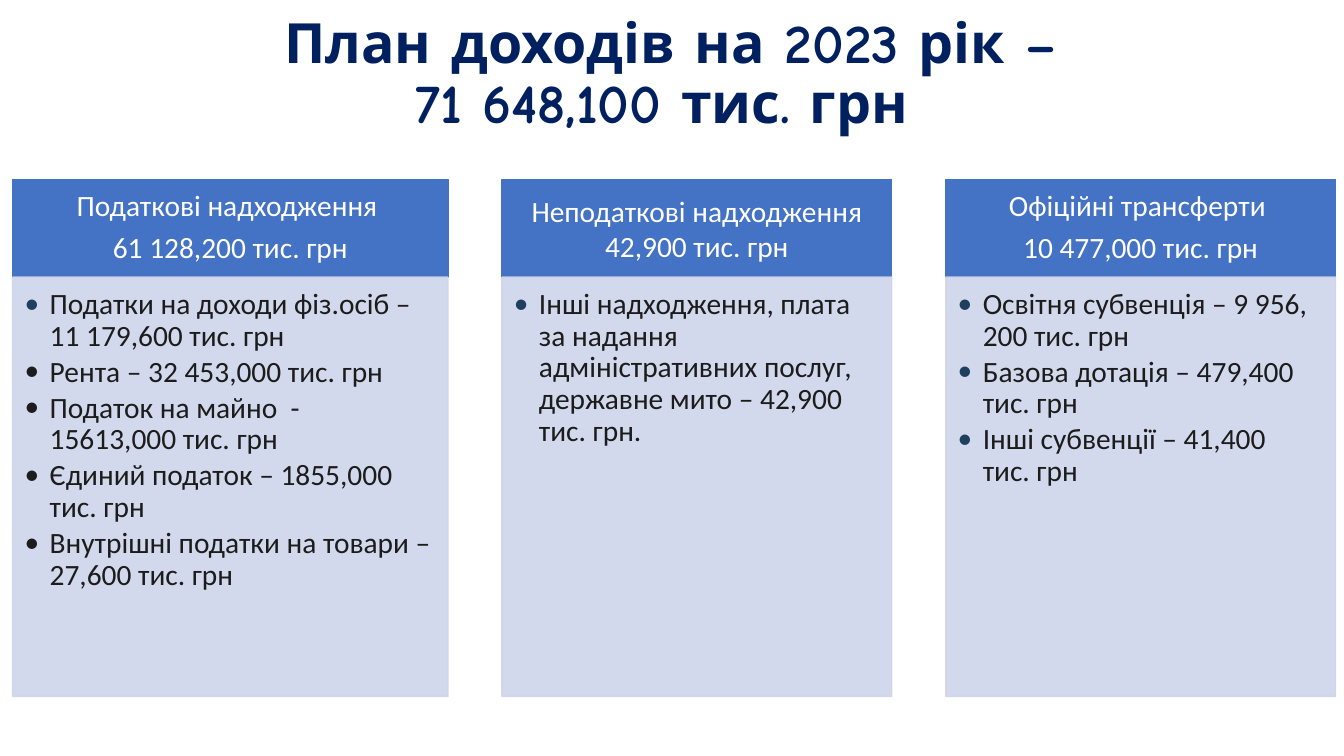
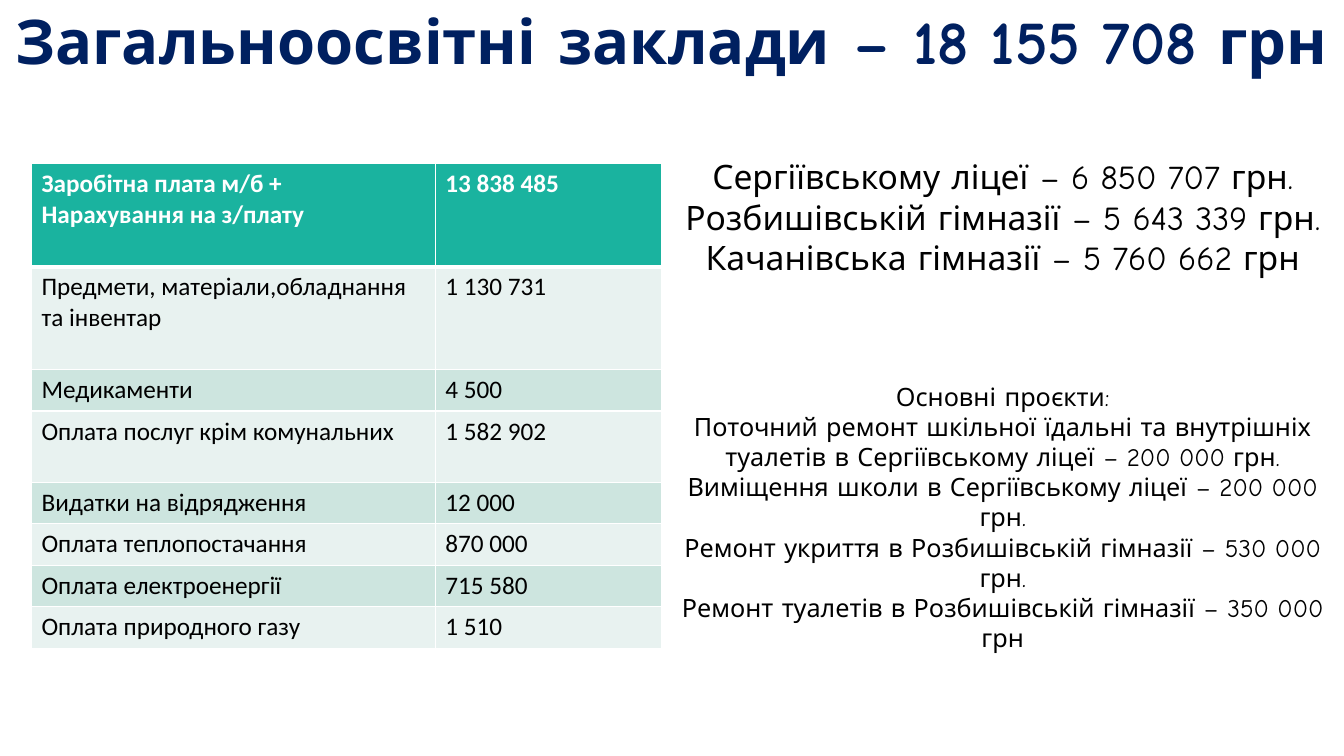
from lxml.etree import SubElement as Sub
from pptx import Presentation
from pptx.dml.color import RGBColor
from pptx.enum.shapes import MSO_SHAPE as Shape
from pptx.enum.text import MSO_ANCHOR as Anchor, PP_ALIGN as Align
from pptx.oxml.ns import qn
from pptx.util import Pt

WIDTH, HEIGHT = 960, 540
BODY_FONT, DISPLAY_FONT = "Calibri", "Comic Neue"
NAVY, BLUE, PALE, BULLET = "002060", "4472C4", "CFD5EA", "1F3F5F"
WHITE, BLACK, INK = "FFFFFF", "000000", "1C1C1C"
TEAL, BANDS = "1AB39F", ("CDE5DF", "E8F2F0")


def rgb(value):
    return RGBColor.from_string(value)


class Deck:
    """Holds the shared style and the current slide."""

    def __init__(self):
        self.prs = Presentation()
        self.prs.slide_width, self.prs.slide_height = Pt(WIDTH), Pt(HEIGHT)

    def slide(self):
        self.s = self.prs.slides.add_slide(self.prs.slide_layouts[6])

    def style(self, p, font, size, color, bold=False):
        p.font.name, p.font.size, p.font.bold = font, Pt(size), bold
        p.font.color.rgb = rgb(color)

    def frame(self, sp, anchor, insets):
        tf = sp.text_frame
        tf.word_wrap, tf.vertical_anchor = True, anchor
        tf.margin_left, tf.margin_top, tf.margin_right, tf.margin_bottom = map(Pt, insets)
        return tf

    def fill_text(self, tf, lines, font, size, color, bold=False,
                  align=Align.CENTER, spacing=1.0, after=0, bullets=()):
        for i, line in enumerate(lines):
            p = tf.paragraphs[0] if i == 0 else tf.add_paragraph()
            p.text = line
            if bullets:
                self.bullet(p, bullets[i])
            p.alignment, p.line_spacing, p.space_after = align, spacing, Pt(after)
            self.style(p, font, size, color, bold)

    def bullet(self, p, color):
        pPr = p._p.get_or_add_pPr()
        pPr.set("marL", str(Pt(18)))
        pPr.set("indent", str(-Pt(18)))
        Sub(Sub(pPr, qn("a:buClr")), qn("a:srgbClr"), val=color)
        Sub(pPr, qn("a:buFont"), typeface=BODY_FONT)
        Sub(pPr, qn("a:buChar"), char="•")

    def text(self, box, lines, size, color=BLACK, anchor=Anchor.TOP, **look):
        sp = self.s.shapes.add_textbox(*map(Pt, box))
        tf = self.frame(sp, anchor, (7.2, 3.6, 7.2, 3.6))
        self.fill_text(tf, lines, DISPLAY_FONT, size, color, **look)

    def title(self, box, text, size):
        self.text(box, [text], size, NAVY, Anchor.MIDDLE, bold=True, spacing=0.9)

    def panel(self, box, color, alpha=None):
        sp = self.s.shapes.add_shape(Shape.RECTANGLE, *map(Pt, box))
        sp.shadow.inherit = False
        sp.fill.solid()
        sp.fill.fore_color.rgb = sp.line.color.rgb = rgb(color)
        sp.line.width = Pt(1)
        if alpha:
            for clr in sp._element.spPr.findall(".//" + qn("a:srgbClr")):
                Sub(clr, qn("a:alpha"), val=str(alpha * 1000))
        return sp

    def column(self, left, width, heading, items, accents):
        sp = self.panel((left, 128, width, 70), BLUE)
        tf = self.frame(sp, Anchor.MIDDLE, (11.5, 6.5, 11.5, 6.5))
        self.fill_text(tf, heading, BODY_FONT, 21, WHITE, after=7,
                       spacing=0.9 if len(heading) > 1 else 1.0)
        sp = self.panel((left, 198, width, 299.5), PALE, 90)
        tf = self.frame(sp, Anchor.TOP, (8.5, 8.5, 11.5, 13))
        colors = [BULLET if i < accents else INK for i in range(len(items))]
        self.fill_text(tf, items, BODY_FONT, 21, INK, align=Align.LEFT,
                       spacing=0.9, after=3, bullets=colors)

    def border(self, cell, side, width):
        ln = Sub(cell._tc.get_or_add_tcPr(), qn("a:" + side), w=str(Pt(width)))
        Sub(Sub(ln, qn("a:solidFill")), qn("a:srgbClr"), val=WHITE)

    def table(self, left, top, widths, heights, rows):
        tbl = self.s.shapes.add_table(len(rows), len(widths), Pt(left), Pt(top),
                                      Pt(sum(widths)), Pt(sum(heights))).table
        for col, width in zip(tbl.columns, widths):
            col.width = Pt(width)
        for i, (row, height) in enumerate(zip(rows, heights)):
            tbl.rows[i].height = Pt(height)
            for j, value in enumerate(row):
                cell = tbl.cell(i, j)
                head = i == 0
                for side, width in (("lnL", 1), ("lnR", 1), ("lnT", 3 if i == 1 else 1),
                                    ("lnB", 3 if head else 1)):
                    self.border(cell, side, width)
                cell.fill.solid()
                cell.fill.fore_color.rgb = rgb(TEAL if head else BANDS[i % 2])
                self.fill_text(cell.text_frame, [value], BODY_FONT, 18,
                               WHITE if head else BLACK, head, Align.LEFT)


def income_plan(deck):
    deck.slide()
    columns = [
        (311, ["Податкові надходження ", "61 128,200 тис. грн"],
         ["Податки на доходи фіз.осіб – 11 179,600 тис. грн",
          "Рента – 32 453,000 тис. грн",
          "Податок на майно  - 15613,000 тис. грн",
          "Єдиний податок – 1855,000 тис. грн",
          "Внутрішні податки на товари – 27,600 тис. грн"], 1),
        (278.5, ["Неподаткові надходження 42,900 тис. грн"],
         ["Інші надходження, плата за надання адміністративних послуг, "
          "державне мито – 42,900 тис. грн."], 1),
        (278.5, ["Офіційні трансферти ", "10 477,000 тис. грн"],
         ["Освітня субвенція – 9 956, 200 тис. грн",
          "Базова дотація – 479,400 тис. грн",
          "Інші субвенції – 41,400 тис. грн"], 3),
    ]
    left, gap = 9, 38.5
    for width, heading, items, accents in columns:
        deck.column(left, width, heading, items, accents)
        left += width + gap
    deck.title((66, 14.5, 828, 78.5), "План доходів на 2023 рік –\v71 648,100 тис. грн ", 39.6)


def schools(deck):
    deck.slide()
    deck.title((0, 0, WIDTH, 63.5), "Загальноосвітні заклади – 18 155 708 грн", 44)
    rows = [
        ("Заробітна плата м/б + Нарахування на з/плату", "13 838 485"),
        ("Предмети, матеріали,обладнання та інвентар", "1 130 731"),
        ("Медикаменти", "4 500"),
        ("Оплата послуг крім комунальних", "1 582 902"),
        ("Видатки на відрядження", "12 000"),
        ("Оплата теплопостачання", "870 000"),
        ("Оплата електроенергії", "715 580"),
        ("Оплата природного газу", "1 510"),
    ]
    heights = [73.5, 73.5, 29.6, 51] + [29.6] * 4
    deck.table(22.5, 117, (288.5, 161.5), heights, rows)
    deck.text((472.5, 268.5, 487.5, 138), [
        "Основні проєкти:",
        "Поточний ремонт шкільної їдальні та внутрішніх туалетів "
        "в Сергіївському ліцеї – 200 000 грн.",
        "Виміщення школи в Сергіївському ліцеї – 200 000 грн.",
        "Ремонт укриття в Розбишівській гімназії – 530 000 грн.",
        "Ремонт туалетів в Розбишівській гімназії – 350 000 грн"], 18)
    deck.text((472.5, 108, 487.5, 94.5), [
        "Сергіївському ліцеї – 6 850 707 грн.",
        "Розбишівській гімназії – 5 643 339 грн.",
        "Качанівська гімназії – 5 760 662 грн"], 24)


def main():
    deck = Deck()
    income_plan(deck)
    schools(deck)
    deck.prs.save("out.pptx")


if __name__ == "__main__":
    main()
